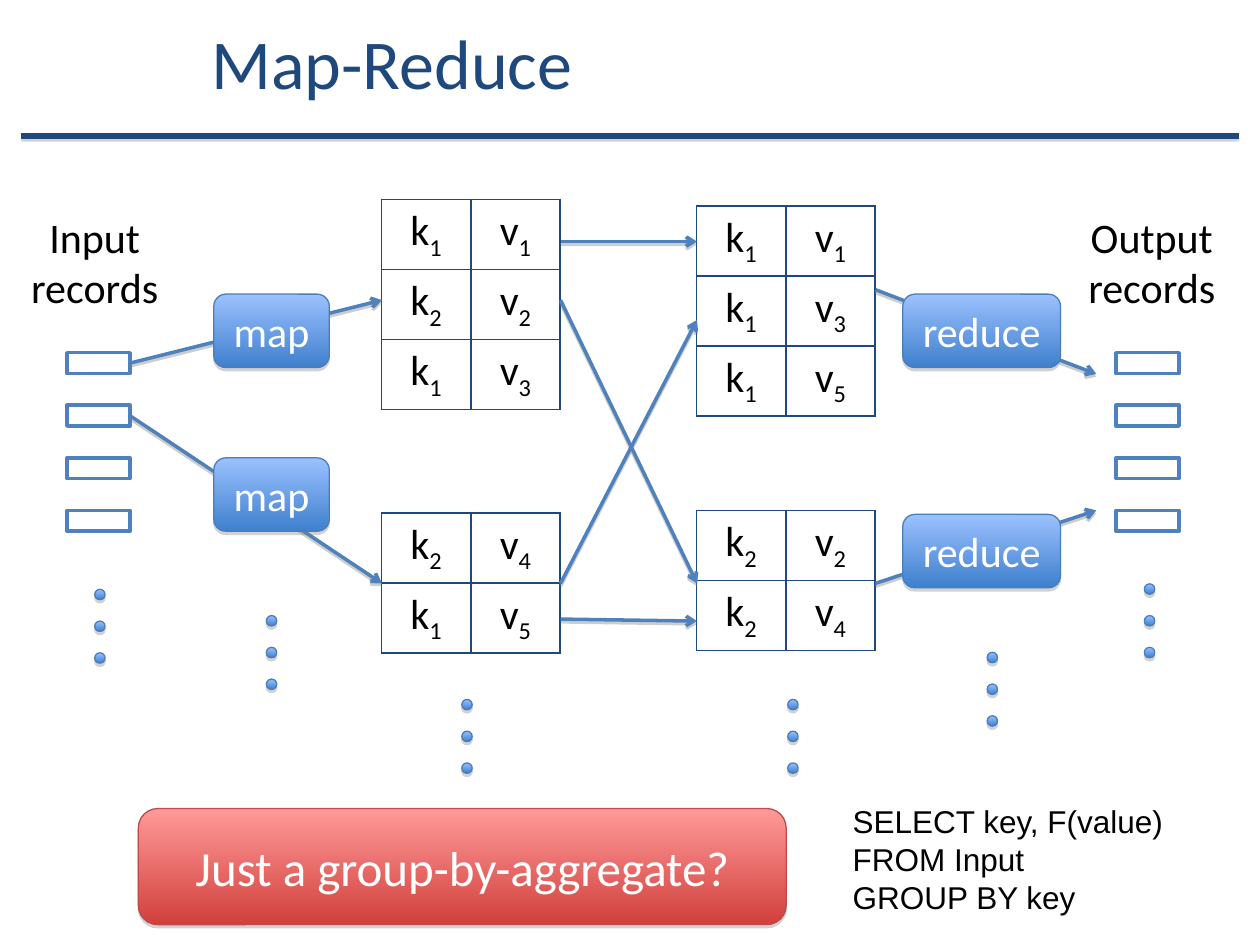
import dataclasses

import pptx
import pptx.dml.color
import pptx.enum.shapes
import pptx.enum.text
import pptx.oxml
import pptx.oxml.ns
import pptx.util

Cm = pptx.util.Cm
Pt = pptx.util.Pt
SHAPE = pptx.enum.shapes.MSO_SHAPE
STRAIGHT = pptx.enum.shapes.MSO_CONNECTOR.STRAIGHT
ANCHOR = pptx.enum.text.MSO_ANCHOR
ALIGN = pptx.enum.text.PP_ALIGN
NAMESPACE = pptx.oxml.ns.nsdecls("a")


@dataclasses.dataclass(frozen=True)
class Theme:
    # Colours; a gradient is top, bottom and outline
    navy: str = "1F497D"
    blue: str = "4F81BD"
    black: str = "000000"
    white: str = "FFFFFF"
    shadow: str = "808080"
    blue_gradient: tuple = ("9BC1FF", "3F80CD", "4A7EBB")
    red_gradient: tuple = ("FF9A99", "D1403C", "BE4B48")
    # Fonts and sizes in points
    font: str = "Calibri"
    code_font: str = "Arial"
    title_size: int = 40
    banner_size: int = 28
    body_size: int = 24
    code_size: int = 18


def rgb(colour):
    return pptx.dml.color.RGBColor.from_string(colour)


class SlideBuilder:
    """Draws styled elements on one slide; all lengths are centimetres."""

    def __init__(self, slide, theme):
        self.slide = slide
        self.theme = theme

    def format_font(self, font, size, colour, name=None):
        font.size = Pt(size)
        font.name = name or self.theme.font
        font.color.rgb = rgb(colour)

    def set_text(self, text_frame, text, size, colour, align, name=None):
        text_frame.text = text
        for paragraph in text_frame.paragraphs:
            paragraph.alignment = align
            self.format_font(paragraph.font, size, colour, name)

    def add_shadow(self, shape, opacity, distance):
        shape._element.spPr.append(pptx.oxml.parse_xml(
            f'<a:effectLst {NAMESPACE}><a:outerShdw blurRad="0" dist="{Pt(distance)}" '
            f'dir="5400000" rotWithShape="0"><a:srgbClr val="{self.theme.shadow}">'
            f'<a:alpha val="{opacity * 1000}"/></a:srgbClr></a:outerShdw></a:effectLst>'))

    def title(self, text, left, top, width, height):
        title = self.slide.shapes.title
        title.left, title.top, title.width, title.height = map(Cm, (left, top, width, height))
        title.text_frame.vertical_anchor = ANCHOR.MIDDLE
        self.set_text(title.text_frame, text, self.theme.title_size, self.theme.navy, ALIGN.LEFT)

    def line(self, start, end, colour, width, shadow):
        connector = self.slide.shapes.add_connector(STRAIGHT, *map(Cm, (*start, *end)))
        connector.line.color.rgb = rgb(colour)
        connector.line.width = Pt(width)
        self.add_shadow(connector, *shadow)
        return connector

    def arrow(self, start, end):
        connector = self.line(start, end, self.theme.blue, 2, (38, 1.6))
        outline = connector._element.spPr.find(pptx.oxml.ns.qn("a:ln"))
        outline.append(pptx.oxml.parse_xml(f'<a:tailEnd {NAMESPACE} type="arrow"/>'))

    def gradient_shape(self, shapes, kind, left, top, width, height, gradient):
        shape = shapes.add_shape(kind, *map(Cm, (left, top, width, height)))
        first, last, outline = gradient
        shape.fill.gradient()
        shape.fill.gradient_angle = 270
        for stop, colour in zip(shape.fill.gradient_stops, (first, last)):
            stop.color.rgb = rgb(colour)
        shape.line.color.rgb = rgb(outline)
        shape.line.width = Pt(0.75)
        self.add_shadow(shape, 35, 1.8)
        return shape

    def box(self, text, left, top, width, height, gradient, size):
        shape = self.gradient_shape(self.slide.shapes, SHAPE.ROUNDED_RECTANGLE,
                                    left, top, width, height, gradient)
        shape.text_frame.vertical_anchor = ANCHOR.MIDDLE
        self.set_text(shape.text_frame, text, size, self.theme.white, ALIGN.CENTER)

    def dots(self, left, top):
        group = self.slide.shapes.add_group_shape()
        for index in range(3):
            self.gradient_shape(group.shapes, SHAPE.OVAL, left, top + index * 0.64,
                                0.21, 0.21, self.theme.blue_gradient)

    def records(self, left, top):
        for index in range(4):
            shape = self.slide.shapes.add_shape(
                SHAPE.RECTANGLE, Cm(left), Cm(top + index * 1.06), Cm(1.27), Cm(0.42))
            shape.shadow.inherit = False
            shape.fill.solid()
            shape.fill.fore_color.rgb = rgb(self.theme.white)
            shape.line.color.rgb = rgb(self.theme.blue)
            shape.line.width = Pt(2)

    def text(self, text, left, top, width, height, size, align, name=None):
        box = self.slide.shapes.add_textbox(*map(Cm, (left, top, width, height)))
        box.text_frame.word_wrap = False
        box.text_frame.auto_size = pptx.enum.text.MSO_AUTO_SIZE.SHAPE_TO_FIT_TEXT
        self.set_text(box.text_frame, text, size, self.theme.black, align, name)

    def pairs_table(self, pairs, left, top):
        """Table of key and value cells, each a letter with a subscript."""
        table = self.slide.shapes.add_table(
            len(pairs), 2, Cm(left), Cm(top), Cm(3.6), Cm(1.27 * len(pairs))).table
        table.first_row = table.horz_banding = False
        for row, pair in enumerate(pairs):
            for column, (letter, subscript) in enumerate(zip("kv", pair)):
                self.pair_cell(table.cell(row, column), letter, str(subscript))

    def pair_cell(self, cell, letter, subscript):
        cell.vertical_anchor = ANCHOR.MIDDLE
        paragraph = cell.text_frame.paragraphs[0]
        paragraph.alignment = ALIGN.CENTER
        for text in (letter, subscript):
            run = paragraph.add_run()
            run.text = text
            self.format_font(run.font, self.theme.body_size, self.theme.black)
        run.font._element.set("baseline", "-25000")
        properties = cell._tc.get_or_add_tcPr()
        for side in ("lnL", "lnR", "lnT", "lnB"):
            properties.append(pptx.oxml.parse_xml(
                f'<a:{side} {NAMESPACE} w="{Pt(1)}"><a:solidFill>'
                f'<a:srgbClr val="{self.theme.navy}"/></a:solidFill></a:{side}>'))
        cell.fill.background()


def main():
    presentation = pptx.Presentation()
    presentation.slide_width, presentation.slide_height = Cm(25.4), Cm(19.05)
    theme = Theme()
    slide = presentation.slides.add_slide(presentation.slide_layouts[5])
    builder = SlideBuilder(slide, theme)

    # Heading and rule
    builder.title("Map-Reduce", 4.01, 0.13, 21.16, 2.21)
    builder.line((0.43, 2.74), (24.97, 2.74), theme.navy, 3, (35, 1.8))

    # Input and output records
    for label, label_left, records_left in (("Input", 0.36, 1.35), ("Output", 21.67, 22.5)):
        builder.text(f"{label}\nrecords", label_left, 4.14, 3.1, 2.31,
                     theme.body_size, ALIGN.CENTER)
        builder.records(records_left, 7.11)

    # Key-value tables before and after the shuffle
    for pairs, left, top in (
        (((1, 1), (2, 2), (1, 3)), 7.69, 4.02),
        (((2, 4), (1, 5)), 7.69, 10.34),
        (((1, 1), (1, 3), (1, 5)), 14.04, 4.15),
        (((2, 2), (2, 4)), 14.04, 10.29),
    ):
        builder.pairs_table(pairs, left, top)

    # Arrows: map, shuffle, reduce
    for start, end in (
        ((2.62, 7.32), (7.7, 6.05)),
        ((2.62, 8.38), (7.7, 11.76)),
        ((11.3, 4.87), (14.05, 4.87)),
        ((11.3, 6.05), (14.05, 11.76)),
        ((11.3, 11.76), (14.05, 6.45)),
        ((11.3, 12.48), (14.05, 12.52)),
        ((17.65, 5.84), (22.1, 7.54)),
        ((17.65, 11.76), (22.1, 10.29)),
    ):
        builder.arrow(start, end)

    # Map and reduce steps
    for name, left, width, tops in (("map", 4.31, 2.33, (5.93, 9.23)),
                                    ("reduce", 18.2, 3.18, (5.93, 10.37))):
        for top in tops:
            builder.box(name, left, top, width, 1.48, theme.blue_gradient, theme.body_size)

    # Continuation dots under each column
    for left, top in ((1.91, 11.88), (5.37, 12.41), (9.31, 14.1),
                      (15.88, 14.1), (19.9, 13.15), (23.07, 11.77)):
        builder.dots(left, top)

    # Question banner and its query
    builder.box("Just a group-by-aggregate?", 2.79, 16.3, 13.06, 2.34,
                theme.red_gradient, theme.banner_size)
    builder.text("SELECT key, F(value)\nFROM Input\nGROUP BY key", 16.94, 16.05, 6.83, 2.56,
                 theme.code_size, ALIGN.LEFT, theme.code_font)

    presentation.save("out.pptx")


if __name__ == "__main__":
    main()
